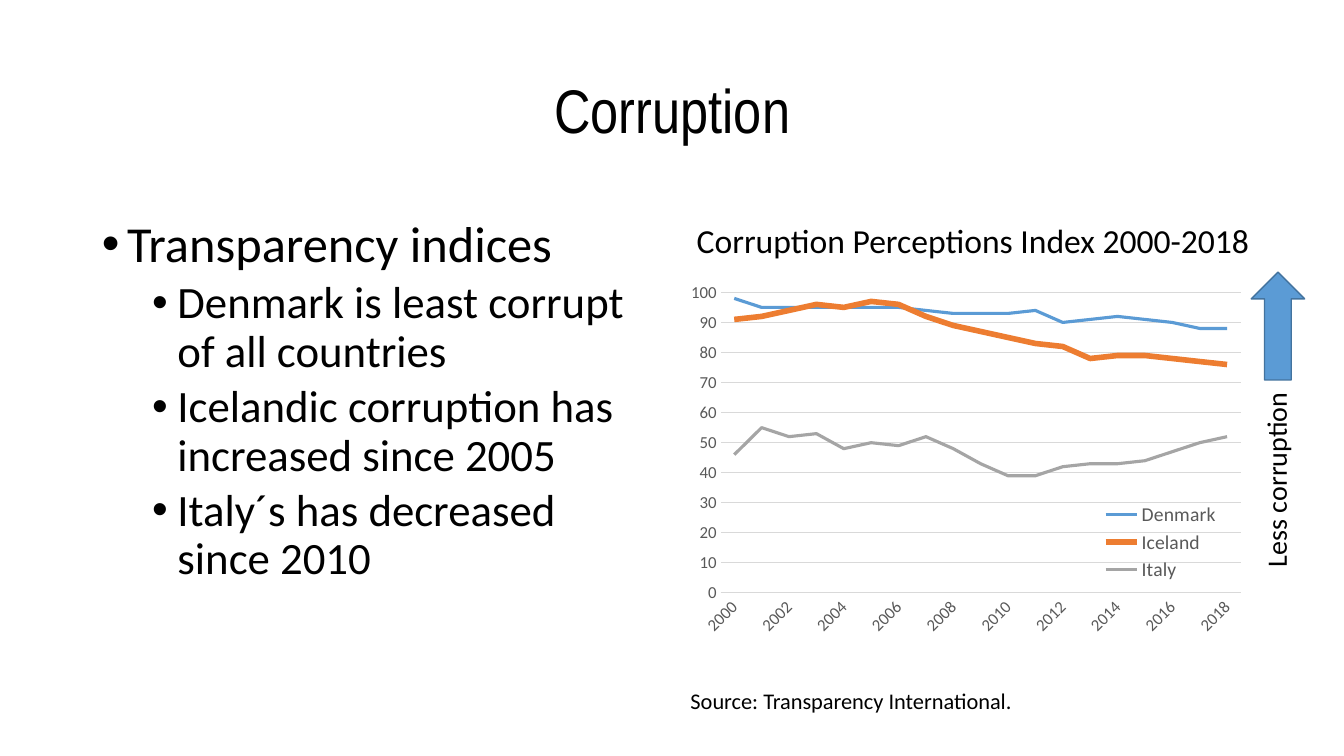
from lxml import etree
from pptx import Presentation
from pptx.chart.data import CategoryChartData
from pptx.dml.color import RGBColor
from pptx.enum.chart import XL_CHART_TYPE as ChartType, XL_LEGEND_POSITION as LegendPosition
from pptx.enum.chart import XL_TICK_MARK as TickMark
from pptx.enum.shapes import MSO_SHAPE as Shape
from pptx.enum.text import MSO_ANCHOR as Anchor, MSO_AUTO_SIZE as AutoSize, PP_ALIGN as Align
from pptx.oxml.ns import qn
from pptx.util import Pt

PX = 9144
COLORS = {
    "text": "000000", "axis": "595959", "grid": "D9D9D9", "arrow_line": "43739E",
    "Denmark": "5B9BD5", "Iceland": "ED7D31", "Italy": "A5A5A5",
}
INDEX = {
    "Denmark": [98, 95, 95, 95, 95, 95, 95, 94, 93, 93, 93, 94, 90, 91, 92, 91, 90, 88, 88],
    "Iceland": [91, 92, 94, 96, 95, 97, 96, 92, 89, 87, 85, 83, 82, 78, 79, 79, 78, 77, 76],
    "Italy": [46, 55, 52, 53, 48, 50, 49, 52, 48, 43, 39, 39, 42, 43, 43, 44, 47, 50, 52],
}
FINDINGS = [
    ("Transparency indices", 0),
    ("Denmark is least corrupt of all countries", 1),
    ("Icelandic corruption has increased since 2005", 1),
    ("Italy´s has decreased since 2010", 1),
]


def color(key):
    return RGBColor.from_string(COLORS[key])


def emu(*lengths):
    return [length * PX for length in lengths]


def set_font(font, size, key="text", name="Calibri"):
    font.size, font.name = Pt(size), name
    font.color.rgb = color(key)


def set_line(line, key, width):
    line.color.rgb = color(key)
    line.width = Pt(width)


def place(holder, box, anchor):
    holder.left, holder.top, holder.width, holder.height = emu(*box)
    frame = holder.text_frame
    frame.word_wrap, frame.auto_size = True, AutoSize.NONE
    frame.vertical_anchor = anchor
    return frame


def set_bullet(paragraph, indent, hang, bullet):
    properties = paragraph._p.get_or_add_pPr()
    properties.set("marL", str(indent * PX))
    properties.set("indent", str(-hang * PX))
    if bullet:
        font = etree.SubElement(properties, qn("a:buFont"))
        font.set("typeface", "Arial")
        etree.SubElement(properties, qn("a:buChar")).set("char", bullet)
    else:
        etree.SubElement(properties, qn("a:buNone"))


def fill_heading(holder, box, text, size, anchor, before=0, name="Calibri"):
    heading = place(holder, box, anchor).paragraphs[0]
    heading.text = text
    heading.alignment = Align.CENTER
    heading.line_spacing, heading.space_before = 0.9, Pt(before)
    set_bullet(heading, 0, 0, None)
    set_font(heading.font, size, name=name)


def fill_findings(holder, box):
    frame = place(holder, box, Anchor.TOP)
    for number, (text, level) in enumerate(FINDINGS):
        finding = frame.add_paragraph() if number else frame.paragraphs[0]
        finding.text, finding.level = text, level
        finding.line_spacing = 0.9
        finding.space_before = Pt(5 if level else 10)
        set_bullet(finding, 25 + 50 * level, 25, "•")
        set_font(finding.font, 32 if level else 36)


def add_label(slide, box, text, size, wrap=True, rotation=0):
    label = slide.shapes.add_textbox(*emu(*box))
    label.rotation = rotation
    label.text_frame.word_wrap = wrap
    paragraph = label.text_frame.paragraphs[0]
    paragraph.text = text
    set_font(paragraph.font, size)


def manual_layout(x, y, w, h, inner=False):
    layout = etree.Element(qn("c:layout"))
    manual = etree.SubElement(layout, qn("c:manualLayout"))
    settings = [("layoutTarget", "inner")] if inner else []
    settings += [("xMode", "edge"), ("yMode", "edge"), ("x", x), ("y", y), ("w", w), ("h", h)]
    for tag, value in settings:
        etree.SubElement(manual, qn(f"c:{tag}")).set("val", str(value))
    return layout


def add_index_chart(slide, box):
    data = CategoryChartData(number_format="0")
    data.categories = [str(year) for year in range(2000, 2019)]
    for country, values in INDEX.items():
        data.add_series(country, values)
    chart = slide.shapes.add_chart(ChartType.LINE, *emu(*box), data).chart
    chart.has_title = False
    set_font(chart.font, 10)
    chart.plots[0].vary_by_categories = False
    for country in chart.plots[0].series:
        country.smooth = False
        set_line(country.format.line, country.name, 4 if country.name == "Iceland" else 2.25)

    years, scores = chart.category_axis, chart.value_axis
    for axis in (years, scores):
        axis.major_tick_mark = axis.minor_tick_mark = TickMark.NONE
        set_font(axis.tick_labels.font, 12, "axis")
    set_line(years.format.line, "grid", 0.75)
    years._element.find(qn("c:txPr")).find(qn("a:bodyPr")).set("rot", "-2700000")
    skip = etree.Element(qn("c:tickLblSkip"))
    skip.set("val", "2")
    years._element.find(qn("c:noMultiLvlLbl")).addprevious(skip)
    scores.minimum_scale, scores.maximum_scale, scores.major_unit = 0, 100, 10
    scores.tick_labels.number_format = "0"
    scores.tick_labels.number_format_is_linked = False
    scores.format.line.fill.background()
    set_line(scores.major_gridlines.format.line, "grid", 0.75)

    chart.has_legend = True
    legend = chart.legend
    legend.position, legend.include_in_layout = LegendPosition.BOTTOM, False
    set_font(legend.font, 14, "axis")
    for old in legend._element.findall(qn("c:layout")):
        legend._element.remove(old)
    legend._element.find(qn("c:legendPos")).addnext(manual_layout(0.73, 0.55, 0.22, 0.21))
    plot_area = chart._chartSpace.chart.plotArea
    for old in plot_area.findall(qn("c:layout")):
        plot_area.remove(old)
    plot_area.insert(0, manual_layout(0.07, 0.04, 0.91, 0.74, inner=True))


def add_up_arrow(slide, box):
    arrow = slide.shapes.add_shape(Shape.UP_ARROW, *emu(*box))
    arrow.shadow.inherit = False
    arrow.fill.solid()
    arrow.fill.fore_color.rgb = color("Denmark")
    set_line(arrow.line, "arrow_line", 1)


def add_index_panel(slide, heading, box):
    left, top, width, height = box
    fill_heading(heading, (left, top, width, 90), "Corruption Perceptions Index 2000-2018", 24,
                 Anchor.BOTTOM, before=10)
    add_label(slide, (left + 33, top + 503, 605, 37), "Source: Transparency International.", 16)
    add_index_chart(slide, (left + 33, top + 100, 567, 403))
    add_label(slide, (left + 526, top + 279, 195, 44), "Less corruption", 20,
              wrap=False, rotation=270)
    add_up_arrow(slide, (left + 599, top + 96, 53, 107))


def main():
    deck = Presentation()
    deck.slide_width, deck.slide_height = emu(1333, 750)
    slide = deck.slides.add_slide(deck.slide_layouts[3])
    title, findings, heading = list(slide.placeholders)[:3]
    fill_heading(title, (92, 40, 1150, 145), "Corruption", 44, Anchor.MIDDLE, name="Arial Narrow")
    fill_findings(findings, (91, 212, 564, 475))
    add_index_panel(slide, heading, (642, 174, 646, 540))
    deck.save("out.pptx")


if __name__ == "__main__":
    main()
